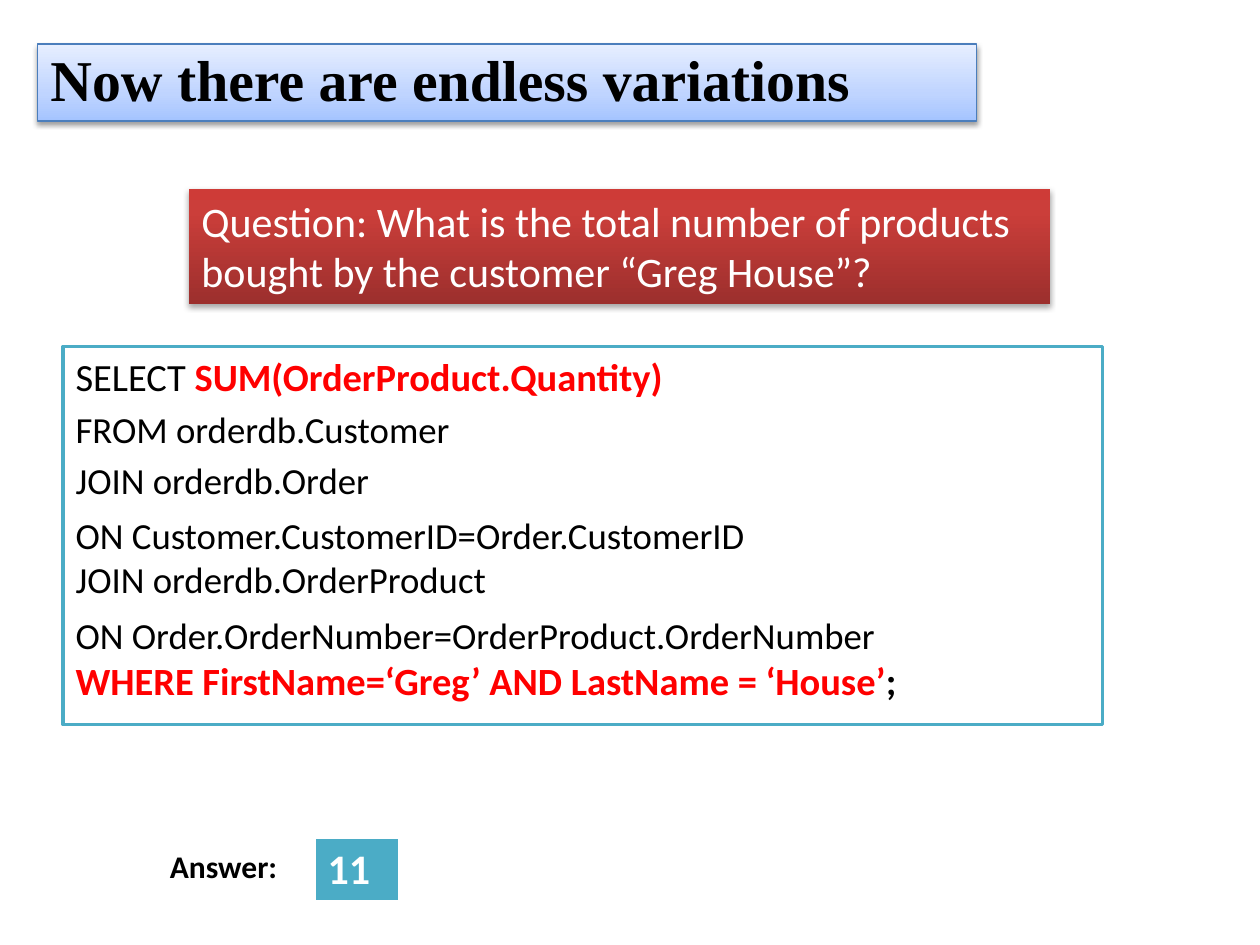
import pptx
import pptx.dml.color
import pptx.enum.shapes
import pptx.enum.text
import pptx.oxml.ns
import pptx.util
from lxml import etree

Pt = pptx.util.Pt
qn = pptx.oxml.ns.qn

BLACK, WHITE, RED, TEAL = "000000", "FFFFFF", "FF0000", "4BACC6"
PLAIN = {"size": Pt(21), "bold": False}
KEYWORD = {"size": Pt(22), "bold": False}
STRONG = {"size": Pt(22), "bold": True}
QUERY = [
    [("SELECT ", KEYWORD, BLACK), ("SUM(OrderProduct.Quantity)", STRONG, RED)],
    [("FROM orderdb.Customer", PLAIN, BLACK)],
    [("JOIN orderdb.Order", PLAIN, BLACK)],
    [("ON Customer.CustomerID=Order.CustomerID\nJOIN orderdb.OrderProduct", PLAIN, BLACK)],
    [("ON Order.OrderNumber=OrderProduct.OrderNumber\n", PLAIN, BLACK),
     ("WHERE FirstName=‘Greg’ AND LastName = ‘House’", STRONG, RED),
     (";", STRONG, BLACK)],
]


def color(value):
    """Turn a hex string into a colour."""
    return pptx.dml.color.RGBColor.from_string(value)


def apply(target, values):
    """Set each attribute in values on target."""
    for name, value in values.items():
        setattr(target, name, value)


def place(shape, box):
    """Move a shape to a left, top, width, height box."""
    apply(shape, dict(zip(("left", "top", "width", "height"), map(Pt, box))))


def write(paragraph, text, values, ink):
    """Add text to a paragraph, with a line break at each newline."""
    for index, line in enumerate(text.split("\n")):
        if index:
            paragraph.add_line_break()
        if line:
            run = paragraph.add_run()
            run.text = line
            apply(run.font, {"name": "Calibri", **values})
            run.font.color.rgb = color(ink)


def shade(shape, stops):
    """Fill a shape with a gradient that rises from its bottom edge."""
    shape.fill.gradient()
    shape.fill.gradient_angle = 90
    stop_list = shape._element.spPr.find(".//" + qn("a:gsLst"))
    for stop in list(stop_list):
        stop_list.remove(stop)
    for position, value in stops:
        stop = etree.SubElement(stop_list, qn("a:gs"), pos=str(position * 1000))
        etree.SubElement(stop, qn("a:srgbClr"), val=value)


def cast_shadow(shape, distance, opacity):
    """Give a shape a soft black shadow below it."""
    shape.shadow.inherit = False
    effects = shape._element.spPr.find(qn("a:effectLst"))
    shadow = etree.SubElement(
        effects, qn("a:outerShdw"), blurRad=str(int(Pt(3.1))),
        dist=str(int(Pt(distance))), dir="5400000", rotWithShape="0")
    ink = etree.SubElement(shadow, qn("a:srgbClr"), val=BLACK)
    etree.SubElement(ink, qn("a:alpha"), val=str(opacity * 1000))


def add_heading(slide, box):
    """Format the title placeholder as a pale blue banner."""
    heading = slide.shapes.title
    place(heading, box)
    shade(heading, [(0, "A4C4FF"), (35, "BFD4FF"), (100, "E6EEFF")])
    heading.line.color.rgb = color("4B7EBC")
    heading.line.width = Pt(0.75)
    cast_shadow(heading, 1.6, 38)
    apply(heading.text_frame, {
        "auto_size": pptx.enum.text.MSO_AUTO_SIZE.NONE,
        "vertical_anchor": pptx.enum.text.MSO_ANCHOR.MIDDLE})
    paragraph = heading.text_frame.paragraphs[0]
    apply(paragraph, {"alignment": pptx.enum.text.PP_ALIGN.LEFT, "line_spacing": 0.9})
    write(paragraph, "Now there are endless variations",
          {"name": "Times New Roman", "size": Pt(33), "bold": True}, BLACK)


def add_query(slide, box):
    """Format the body placeholder as a framed SQL query."""
    query = slide.placeholders[1]
    place(query, box)
    query.fill.solid()
    query.fill.fore_color.rgb = color(WHITE)
    query.line.color.rgb = color(TEAL)
    query.line.width = Pt(2)
    frame = query.text_frame
    frame.auto_size = pptx.enum.text.MSO_AUTO_SIZE.NONE
    for index, clause in enumerate(QUERY):
        paragraph = frame.add_paragraph() if index else frame.paragraphs[0]
        properties = paragraph._p.get_or_add_pPr()
        properties.set("marL", "0")
        properties.set("indent", "0")
        etree.SubElement(properties, qn("a:buNone"))
        for text, values, ink in clause:
            write(paragraph, text, values, ink)


def add_question(slide, box):
    """Add the red question banner."""
    question = slide.shapes.add_shape(
        pptx.enum.shapes.MSO_SHAPE.RECTANGLE, *map(Pt, box))
    shade(question, [(0, "9C2F2D"), (80, "CB3E3A"), (100, "CE3B37")])
    question.line.fill.background()
    cast_shadow(question, 1.8, 35)
    apply(question.text_frame, {
        "word_wrap": True, "vertical_anchor": pptx.enum.text.MSO_ANCHOR.TOP})
    paragraph = question.text_frame.paragraphs[0]
    paragraph.alignment = pptx.enum.text.PP_ALIGN.LEFT
    write(paragraph, "Question: What is the total number of products "
          "bought by the customer “Greg House”?", {"size": Pt(24)}, WHITE)


def add_answer(slide, box):
    """Add the answer label and its one-cell result table."""
    left, top, width, height = box
    label = slide.shapes.add_textbox(*map(Pt, (left, top + 1.4, width, 29)))
    label.text_frame.word_wrap = True
    write(label.text_frame.paragraphs[0], "Answer:",
          {"size": Pt(18), "bold": True}, BLACK)
    result = slide.shapes.add_table(
        1, 1, *map(Pt, (left + 90, top, 48, height))).table
    cell = result.cell(0, 0)
    cell.fill.solid()
    cell.fill.fore_color.rgb = color(TEAL)
    write(cell.text_frame.paragraphs[0], "11",
          {"size": Pt(24), "bold": True}, WHITE)


def main():
    """Build and save the slide."""
    deck = pptx.Presentation()
    deck.slide_width, deck.slide_height = Pt(720), Pt(540)
    slide = deck.slides.add_slide(deck.slide_layouts[1])
    add_heading(slide, (21.6, 25.2, 536.4, 44))
    add_query(slide, (36, 198, 594, 216))
    add_question(slide, (108, 108, 492, 65.5))
    add_answer(slide, (90, 478.8, 360, 36))
    deck.save("out.pptx")


if __name__ == "__main__":
    main()
